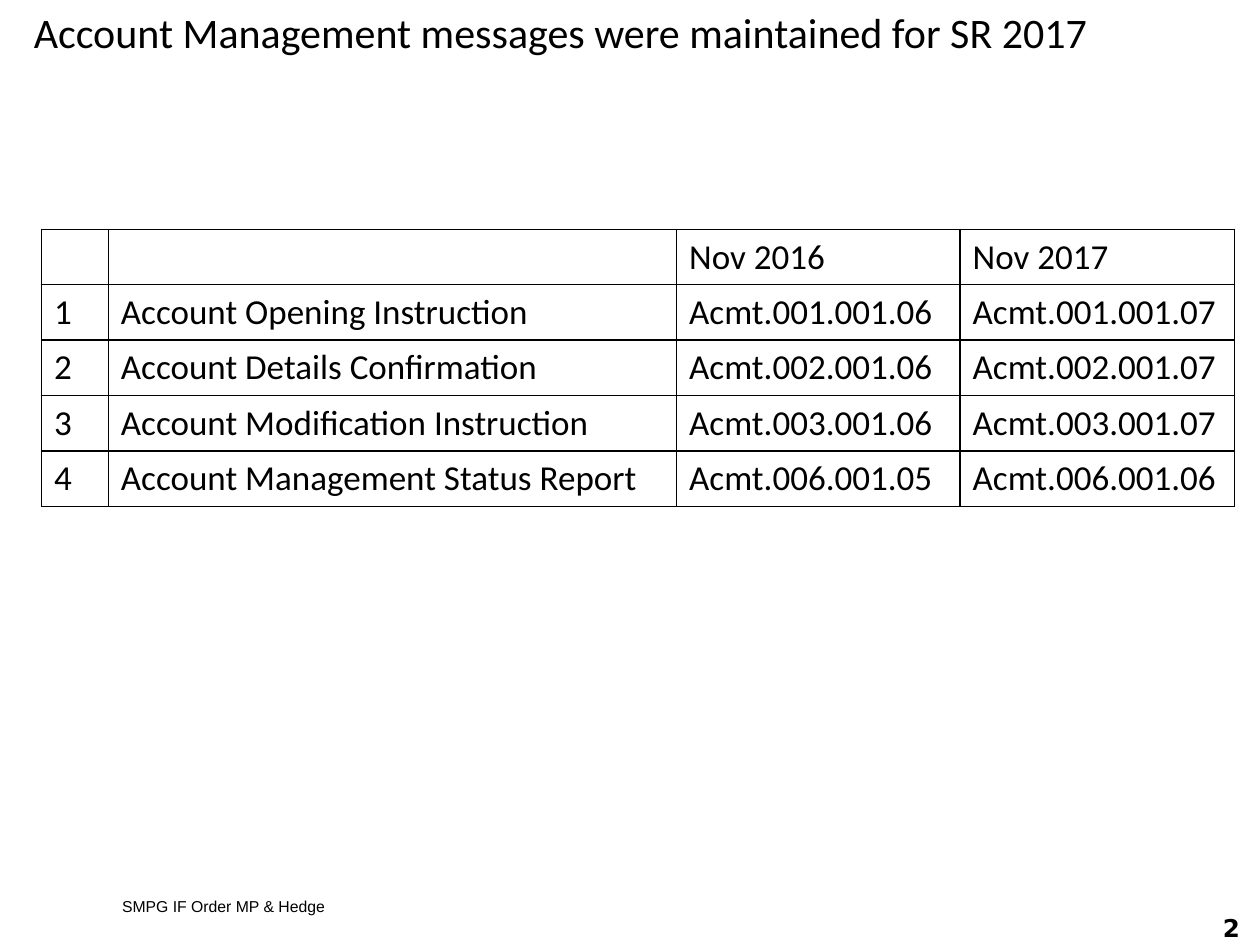
from lxml import etree
from pptx import Presentation
from pptx.dml.color import RGBColor
from pptx.enum.text import MSO_ANCHOR, PP_ALIGN
from pptx.oxml.ns import qn
from pptx.util import Inches, Pt

TOP, MIDDLE = MSO_ANCHOR.TOP, MSO_ANCHOR.MIDDLE
LEFT, RIGHT = PP_ALIGN.LEFT, PP_ALIGN.RIGHT
COLORS = {"ink": "000000", "paper": "FFFFFF"}

TEXTS = [
    ("Account Management messages were maintained for SR 2017",
     (0.17, 0, 9.73, 0.56), "Calibri", 24, False, LEFT, TOP),
    ("SMPG IF Order MP & Hedge",
     (0.87, 7.07, 6.21, 0.25), "Arial", 9, False, LEFT, MIDDLE),
    ("2", (9.11, 7.24, 0.83, 0.25), "DejaVu Sans", 14, True, RIGHT, MIDDLE),
]
MESSAGES = [
    ("", "", "Nov 2016", "Nov 2017"),
    ("1", "Account Opening Instruction", "Acmt.001.001.06", "Acmt.001.001.07"),
    ("2", "Account Details Confirmation", "Acmt.002.001.06", "Acmt.002.001.07"),
    ("3", "Account Modification Instruction", "Acmt.003.001.06", "Acmt.003.001.07"),
    ("4", "Account Management Status Report", "Acmt.006.001.05", "Acmt.006.001.06"),
]
COLUMN_WIDTHS = (0.53, 4.51, 2.25, 2.18)
ROW_HEIGHT = 0.44
TABLE_LEFT, TABLE_TOP = 0.33, 1.82


def style(paragraph, font_name, size, bold=False):
    font = paragraph.font
    font.name, font.size, font.bold = font_name, Pt(size), bold
    font.color.rgb = RGBColor.from_string(COLORS["ink"])


def add_text(slide, text, place, font_name, size, bold, align, anchor):
    frame = slide.shapes.add_textbox(*map(Inches, place)).text_frame
    frame.word_wrap = True
    frame.vertical_anchor = anchor
    paragraph = frame.paragraphs[0]
    paragraph.text = text
    paragraph.alignment = align
    style(paragraph, font_name, size, bold)


def add_borders(cell):
    properties = cell._tc.get_or_add_tcPr()
    for index, side in enumerate(("lnL", "lnR", "lnT", "lnB")):
        line = etree.Element(qn(f"a:{side}"), w=str(Pt(1)))
        fill = etree.SubElement(line, qn("a:solidFill"))
        etree.SubElement(fill, qn("a:srgbClr"), val=COLORS["ink"])
        properties.insert(index, line)


def add_messages(slide):
    table = slide.shapes.add_table(
        len(MESSAGES), len(COLUMN_WIDTHS), Inches(TABLE_LEFT), Inches(TABLE_TOP),
        Inches(sum(COLUMN_WIDTHS)), Inches(ROW_HEIGHT * len(MESSAGES))).table
    table.first_row = table.horz_banding = False
    for column, width in zip(table.columns, COLUMN_WIDTHS):
        column.width = Inches(width)
    for row, message in zip(table.rows, MESSAGES):
        for cell, text in zip(row.cells, message):
            cell.text = text
            cell.fill.solid()
            cell.fill.fore_color.rgb = RGBColor.from_string(COLORS["paper"])
            style(cell.text_frame.paragraphs[0], "Calibri", 20)
            add_borders(cell)


def main():
    deck = Presentation()
    deck.slide_width, deck.slide_height = Inches(10), Inches(7.5)
    slide = deck.slides.add_slide(deck.slide_layouts[6])
    for text in TEXTS:
        add_text(slide, *text)
    add_messages(slide)
    deck.save("out.pptx")


if __name__ == "__main__":
    main()
